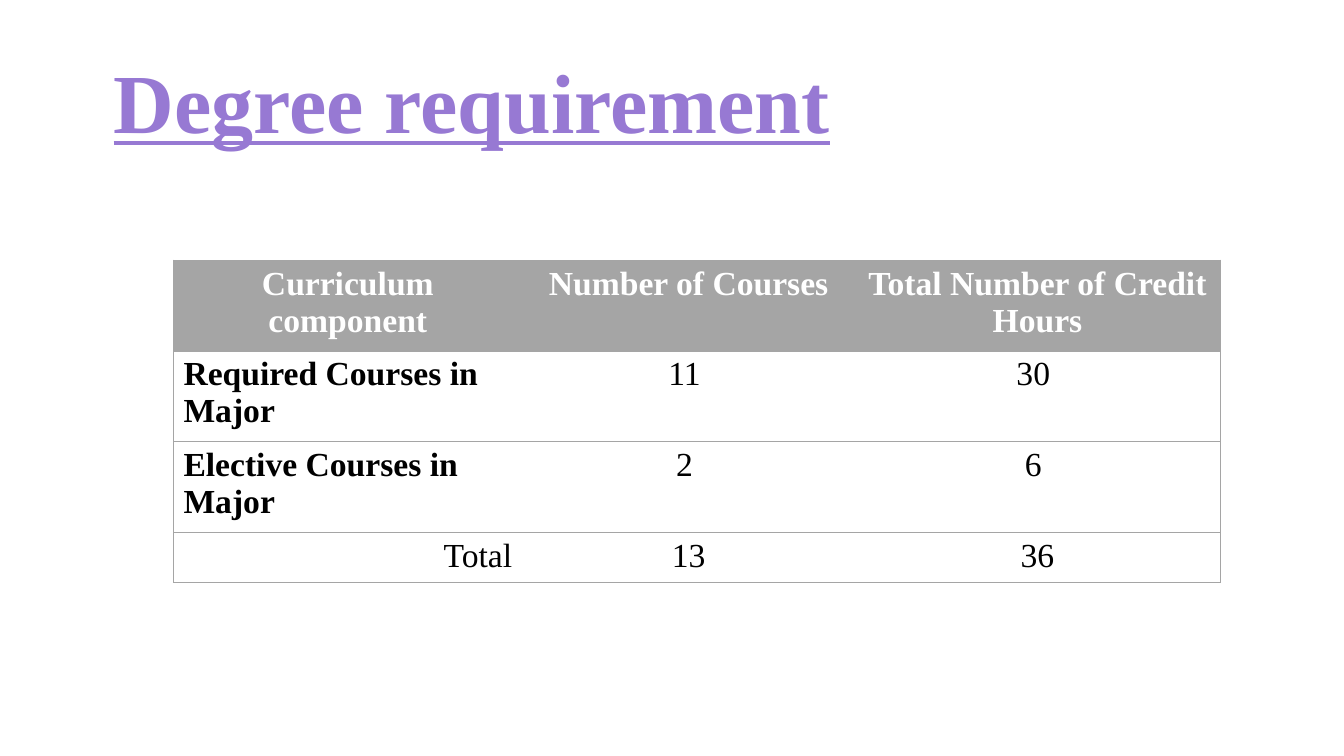
from lxml import etree
from pptx import Presentation
from pptx.dml.color import RGBColor
from pptx.enum.text import MSO_ANCHOR, PP_ALIGN
from pptx.oxml.ns import qn
from pptx.util import Inches, Pt

LEFT, CENTER, RIGHT = PP_ALIGN.LEFT, PP_ALIGN.CENTER, PP_ALIGN.RIGHT
MIDDLE = MSO_ANCHOR.MIDDLE

FONT = "Times New Roman"
PURPLE, GRAY, WHITE, BLACK = "9779D3", "A5A5A5", "FFFFFF", "000000"
BORDER_WIDTH = Pt(0.5)

COLUMN_WIDTHS = [3.46, 3.3, 3.62]
ROW_HEIGHTS = [0.9, 0.9, 0.9, 0.5]
REQUIREMENTS = [
    ["Curriculum component", "Number of Courses", "Total Number of Credit Hours"],
    ["Required Courses in Major", "11 ", "30 "],
    ["Elective Courses in Major", "2 ", "6 "],
    ["Total", "13", "36"],
]


def rgb(value):
    return RGBColor.from_string(value)


def write(frame, text, size=24, color=BLACK, bold=False, underline=False,
          align=LEFT, spacing=1.0):
    frame.word_wrap = True
    paragraph = frame.paragraphs[0]
    paragraph.alignment = align
    paragraph.line_spacing = spacing
    run = paragraph.add_run()
    run.text = text
    run.font.name = FONT
    run.font.size = Pt(size)
    run.font.bold = bold
    run.font.underline = underline
    run.font.color.rgb = rgb(color)


def add_title(slide, text):
    title = slide.shapes.add_textbox(Inches(1.03), Inches(0.33), Inches(11.5), Inches(1.45))
    title.text_frame.vertical_anchor = MIDDLE
    write(title.text_frame, text, size=60, color=PURPLE, bold=True,
          underline=True, spacing=0.9)


def set_border(cell, side, visible):
    properties = cell._tc.get_or_add_tcPr()
    border = etree.SubElement(properties, qn(f"a:ln{side}"), w=str(BORDER_WIDTH))
    if visible:
        fill = etree.SubElement(border, qn("a:solidFill"))
        etree.SubElement(fill, qn("a:srgbClr"), val=GRAY)
    else:
        etree.SubElement(border, qn("a:noFill"))


def format_cell(cell, text, row, column):
    is_header = row == 0
    is_total = row == len(REQUIREMENTS) - 1
    if is_header or column > 0:
        align = CENTER
    else:
        align = RIGHT if is_total else LEFT
    write(cell.text_frame, text, color=WHITE if is_header else BLACK,
          bold=is_header or (column == 0 and not is_total), align=align)

    set_border(cell, "L", column == 0)
    set_border(cell, "R", column == len(COLUMN_WIDTHS) - 1)
    set_border(cell, "T", True)
    set_border(cell, "B", True)
    if is_header:
        cell.fill.solid()
        cell.fill.fore_color.rgb = rgb(GRAY)
    else:
        cell.fill.background()


def add_requirements(slide):
    table = slide.shapes.add_table(
        len(ROW_HEIGHTS), len(COLUMN_WIDTHS), Inches(1.72), Inches(2.58),
        Inches(sum(COLUMN_WIDTHS)), Inches(sum(ROW_HEIGHTS))).table
    table.horz_banding = False
    for column, width in zip(table.columns, COLUMN_WIDTHS):
        column.width = Inches(width)
    for row, height in zip(table.rows, ROW_HEIGHTS):
        row.height = Inches(height)
    for r, texts in enumerate(REQUIREMENTS):
        for c, text in enumerate(texts):
            format_cell(table.cell(r, c), text, r, c)


def main():
    deck = Presentation()
    deck.slide_width = Inches(13.33)
    deck.slide_height = Inches(7.5)
    slide = deck.slides.add_slide(deck.slide_layouts[6])
    add_title(slide, "Degree requirement")
    add_requirements(slide)
    deck.save("out.pptx")


if __name__ == "__main__":
    main()
